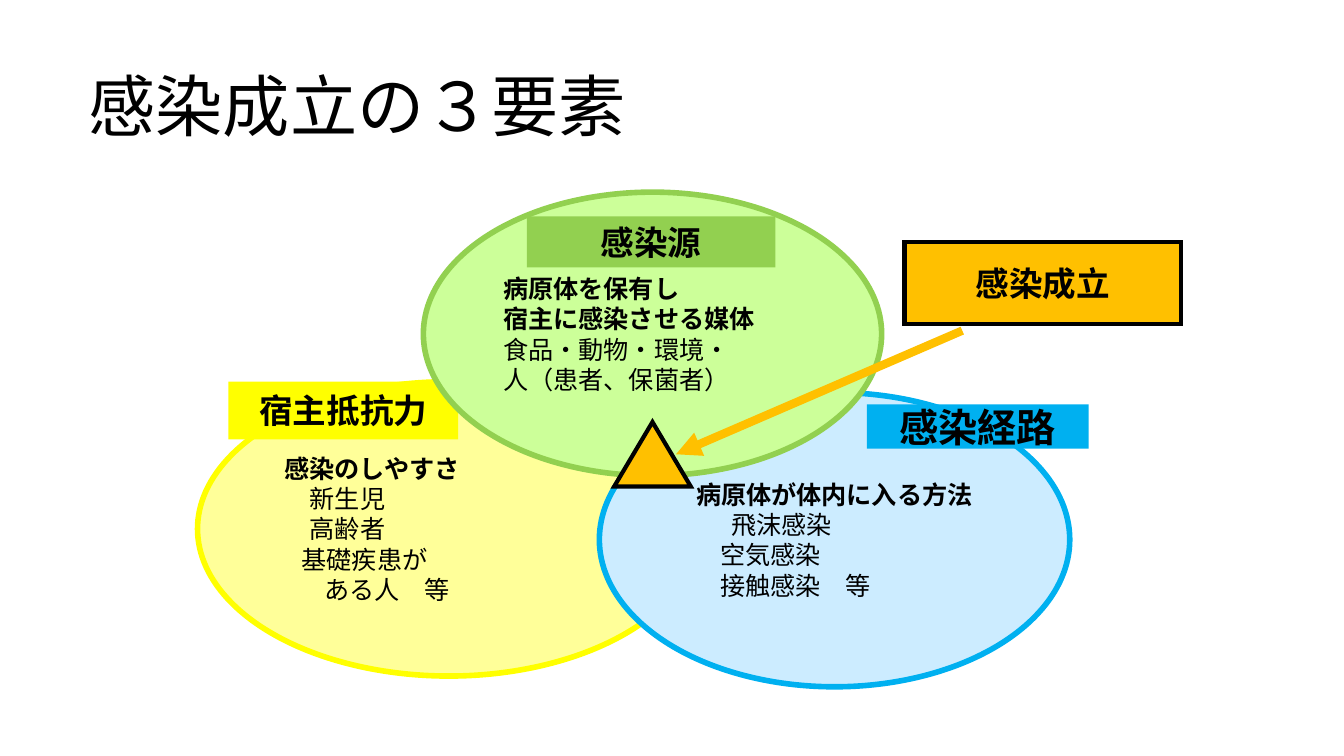
from lxml.etree import SubElement
from pptx import Presentation
from pptx.dml.color import RGBColor
from pptx.enum.shapes import MSO_CONNECTOR, MSO_SHAPE
from pptx.enum.text import MSO_ANCHOR, PP_ALIGN
from pptx.oxml.ns import qn
from pptx.util import Inches, Pt

FONT = "Noto Sans CJK JP"
COLORS = {
    "black": "000000",
    "orange": "FFC000",
    "yellow": "FFFF00",
    "pale_yellow": "FFFF99",
    "blue": "00B0F0",
    "pale_blue": "CCECFF",
    "green": "92D050",
    "pale_green": "CCFF99",
}


def color(name):
    return RGBColor.from_string(COLORS[name])


def write_paragraph(paragraph, text, size, bold=False, align=PP_ALIGN.LEFT):
    run = paragraph.add_run()
    run.text = text
    paragraph.alignment = align
    paragraph.font.size = Pt(size)
    paragraph.font.bold = bold
    paragraph.font.name = FONT
    paragraph.font.color.rgb = color("black")
    # East Asian text takes its typeface from a:ea on the run
    run.font.name = FONT
    SubElement(run.font._element, qn("a:ea"), typeface=FONT)


def add_title(slide, text):
    box = slide.shapes.add_textbox(Inches(0.56), Inches(0.5), Inches(5.22), Inches(0.63))
    frame = box.text_frame
    frame.word_wrap = True
    frame.vertical_anchor = MSO_ANCHOR.MIDDLE
    frame.paragraphs[0].line_spacing = 0.9
    write_paragraph(frame.paragraphs[0], text, 36)


def add_filled_shape(slide, kind, position, fill, line=None, line_width=0):
    shape = slide.shapes.add_shape(kind, *map(Inches, position))
    shape.shadow.inherit = False
    shape.fill.solid()
    shape.fill.fore_color.rgb = color(fill)
    if line:
        shape.line.color.rgb = color(line)
        shape.line.width = Pt(line_width)
        SubElement(shape.line._get_or_add_ln(), qn("a:miter"), lim="800000")
    else:
        shape.line.fill.background()
    return shape


def add_label(slide, position, text, fill, size=18, line=None):
    shape = add_filled_shape(slide, MSO_SHAPE.RECTANGLE, position, fill, line, 2.25)
    frame = shape.text_frame
    frame.margin_top = frame.margin_bottom = 0
    frame.vertical_anchor = MSO_ANCHOR.MIDDLE
    write_paragraph(frame.paragraphs[0], text, size, True, PP_ALIGN.CENTER)


def add_factor(slide, position, fill, line, headings, details, heading_align=PP_ALIGN.LEFT):
    """Ellipse with bold headings above (text, indent in inches) details."""
    shape = add_filled_shape(slide, MSO_SHAPE.OVAL, position, fill, line, 3)
    frame = shape.text_frame
    frame.word_wrap = True
    frame.vertical_anchor = MSO_ANCHOR.MIDDLE
    rows = [(text, 0, True, heading_align) for text in headings]
    rows += [(text, indent, False, PP_ALIGN.LEFT) for text, indent in details]
    for index, (text, indent, bold, align) in enumerate(rows):
        paragraph = frame.add_paragraph() if index else frame.paragraphs[0]
        paragraph.line_spacing = Pt(16.2)
        write_paragraph(paragraph, text, 13.5, bold, align)
        paragraph._p.get_or_add_pPr().set("marL", str(Inches(indent)))


def add_arrow(slide, start, end):
    arrow = slide.shapes.add_connector(
        MSO_CONNECTOR.STRAIGHT, *map(Inches, start + end))
    arrow.line.color.rgb = color("orange")
    arrow.line.width = Pt(4.5)
    SubElement(arrow.line._get_or_add_ln(), qn("a:tailEnd"), type="triangle")
    SubElement(arrow._element.spPr, qn("a:effectLst"))


def main():
    presentation = Presentation()
    presentation.slide_width = Inches(10)
    presentation.slide_height = presentation.slide_width * 9 // 16
    slide = presentation.slides.add_slide(presentation.slide_layouts[6])

    add_title(slide, "感染成立の３要素")
    add_label(slide, (6.73, 1.8, 2.06, 0.61), "感染成立", "orange", line="black")

    add_factor(slide, (1.47, 2.84, 3.74, 2.19), "pale_yellow", "yellow",
               ["感染のしやすさ"],
               [("新生児", 0.19), ("高齢者", 0.19),
                ("基礎疾患が", 0.13), ("ある人　等", 0.3)])
    add_label(slide, (1.7, 2.84, 1.71, 0.43), "宿主抵抗力", "yellow")

    add_factor(slide, (4.46, 2.92, 3.5, 2.19), "pale_blue", "blue",
               ["病原体が体内に入る方法"],
               [("飛沫感染", 0.37), ("空気感染", 0.29), ("接触感染　等", 0.29)],
               PP_ALIGN.CENTER)
    add_label(slide, (6.45, 3.01, 1.65, 0.33), "感染経路", "blue", size=21)

    add_factor(slide, (3.15, 1.43, 3.41, 2.11), "pale_green", "green",
               ["病原体を保有し", "宿主に感染させる媒体"],
               [("食品・動物・環境・", 0), ("人（患者、保菌者）", 0)])
    add_arrow(slide, (7.16, 2.46), (5.03, 3.38))
    add_filled_shape(slide, MSO_SHAPE.ISOSCELES_TRIANGLE, (4.57, 3.14, 0.57, 0.48),
                     "orange", "black", 2.25)
    add_label(slide, (3.92, 1.61, 1.85, 0.38), "感染源", "green")

    presentation.save("out.pptx")


if __name__ == "__main__":
    main()
